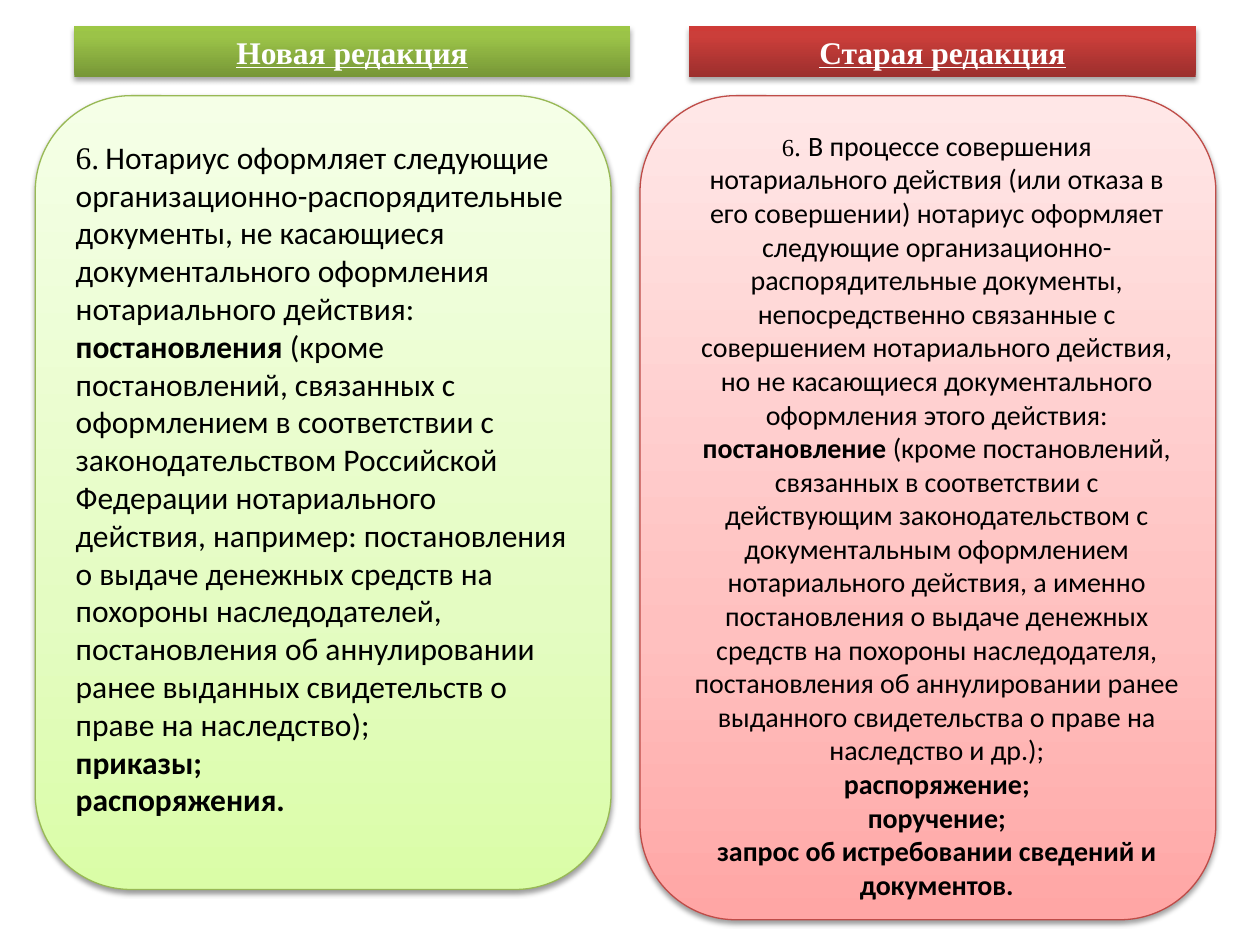
import pptx
import pptx.dml.color
import pptx.enum.shapes
import pptx.enum.text
import pptx.oxml
import pptx.oxml.ns
import pptx.util
from lxml import etree

Inches = pptx.util.Inches
Pt = pptx.util.Pt
Kind = pptx.enum.shapes.MSO_SHAPE
Align = pptx.enum.text.PP_ALIGN
Anchor = pptx.enum.text.MSO_ANCHOR
Fit = pptx.enum.text.MSO_AUTO_SIZE
qn = pptx.oxml.ns.qn

SERIF = "Times New Roman"
SANS = "Calibri"
BOLD = {"bold": True}

NEW = [
    [("6.", {"name": SERIF}),
     (" ", {"name": SERIF, "size": Pt(14)}),
     ("Нотариус оформляет следующие организационно-распорядительные документы, "
      "не касающиеся документального оформления нотариального действия:", {})],
    [("постановления", BOLD),
     (" (кроме постановлений, связанных с оформлением в соответствии с "
      "законодательством Российской Федерации нотариального действия, например: "
      "постановления о выдаче денежных средств на похороны наследодателей, "
      "постановления об аннулировании ранее выданных свидетельств о праве на "
      "наследство);", {})],
    [("приказы;", BOLD)],
    [("распоряжения.", BOLD)],
]

OLD = [
    [("6", {"name": SERIF, "size": Pt(14)}),
     (". ", {"name": SERIF}),
     ("В процессе совершения нотариального действия (или отказа в его совершении) "
      "нотариус оформляет следующие организационно-распорядительные документы, "
      "непосредственно связанные с совершением нотариального действия, но не "
      "касающиеся документального оформления этого действия:", {})],
    [("постановление", BOLD),
     (" (кроме постановлений, связанных в соответствии с действующим "
      "законодательством с документальным оформлением нотариального действия, а "
      "именно постановления о выдаче денежных средств на похороны наследодателя, "
      "постановления об аннулировании ранее выданного свидетельства о праве на "
      "наследство и др.);", {})],
    [("распоряжение;", BOLD)],
    [("поручение;", BOLD)],
    [("запрос об истребовании сведений и документов.", BOLD)],
]


def color(code):
    """Turn a hex string into a colour."""
    return pptx.dml.color.RGBColor.from_string(code)


def shade(shape, stops):
    """Fill a shape with a gradient that runs from bottom to top."""
    shape.fill.gradient()
    shape.fill.gradient_angle = 90
    group = shape._element.spPr.find(qn("a:gradFill")).find(qn("a:gsLst"))
    for old in list(group):
        group.remove(old)
    for place, code in stops:
        stop = etree.SubElement(group, qn("a:gs"), pos=str(place * 1000))
        etree.SubElement(stop, qn("a:srgbClr"), val=code)


def drop(shape, alpha, gap):
    """Give a shape a soft black shadow below it."""
    shape.shadow.inherit = False
    group = shape._element.spPr.find(qn("a:effectLst"))
    outer = etree.SubElement(group, qn("a:outerShdw"), blurRad=str(Pt(3.1)),
                             dist=str(Pt(gap)), dir="5400000", rotWithShape="0")
    black = etree.SubElement(outer, qn("a:srgbClr"), val="000000")
    etree.SubElement(black, qn("a:alpha"), val=str(alpha * 1000))


def write(frame, paras, size, align):
    """Write paragraphs of mixed runs into a text frame."""
    frame.word_wrap = True
    for i, runs in enumerate(paras):
        para = frame.add_paragraph() if i else frame.paragraphs[0]
        para.alignment = align
        para.font.name = SANS
        para.font.size = Pt(size)
        para.font.color.rgb = color("000000")
        for text, style in runs:
            run = para.add_run()
            run.text = text
            for key, value in style.items():
                setattr(run.font, key, value)


def header(slide, left, width, text, stops):
    """Add a column heading bar."""
    bar = slide.shapes.add_shape(Kind.RECTANGLE, Inches(left), Inches(0.21),
                                 Inches(width), Inches(0.4))
    shade(bar, stops)
    bar.line.fill.background()
    drop(bar, 35, 1.8)
    frame = bar.text_frame
    frame.word_wrap = True
    frame.auto_size = Fit.SHAPE_TO_FIT_TEXT
    frame.vertical_anchor = Anchor.TOP
    para = frame.paragraphs[0]
    para.text = text
    para.alignment = Align.CENTER
    font = para.font
    font.name, font.size = SERIF, Pt(18)
    font.bold = font.underline = True
    font.color.rgb = color("FFFFFF")


def panel(slide, left, height, edge, stops):
    """Add a rounded column panel."""
    box = slide.shapes.add_shape(Kind.ROUNDED_RECTANGLE, Inches(left), Inches(0.76),
                                 Inches(4.57), Inches(height))
    shade(box, stops)
    box.line.color.rgb = color(edge)
    box.line.width = Pt(0.75)
    drop(box, 38, 1.6)
    return box


def main():
    """Build the slide that compares two wordings."""
    deck = pptx.Presentation()
    deck.slide_width, deck.slide_height = Inches(10), Inches(7.5)
    slide = deck.slides.add_slide(deck.slide_layouts[6])

    header(slide, 0.59, 4.41, "Новая редакция",
           [(0, "779737"), (80, "9BC348"), (100, "9DC746")])
    header(slide, 5.47, 4.02, "Старая редакция",
           [(0, "9C2F2D"), (80, "CB3E3A"), (100, "CE3B37")])

    green = panel(slide, 0.28, 6.3, "98B955",
                  [(0, "DAFDA7"), (35, "E4FCC2"), (100, "F5FFE7")])
    green.text_frame.vertical_anchor = Anchor.MIDDLE
    green.text_frame.margin_bottom = Inches(0.28)
    write(green.text_frame, NEW, 18, Align.LEFT)

    panel(slide, 5.08, 6.54, "BF4C48",
          [(0, "FFA6A5"), (35, "FFC0BF"), (100, "FFE7E7")])
    note = slide.shapes.add_textbox(Inches(5.39), Inches(0.97),
                                    Inches(4.09), Inches(6.53))
    note.text_frame.auto_size = Fit.SHAPE_TO_FIT_TEXT
    write(note.text_frame, OLD, 16, Align.CENTER)

    deck.save("out.pptx")


if __name__ == "__main__":
    main()
